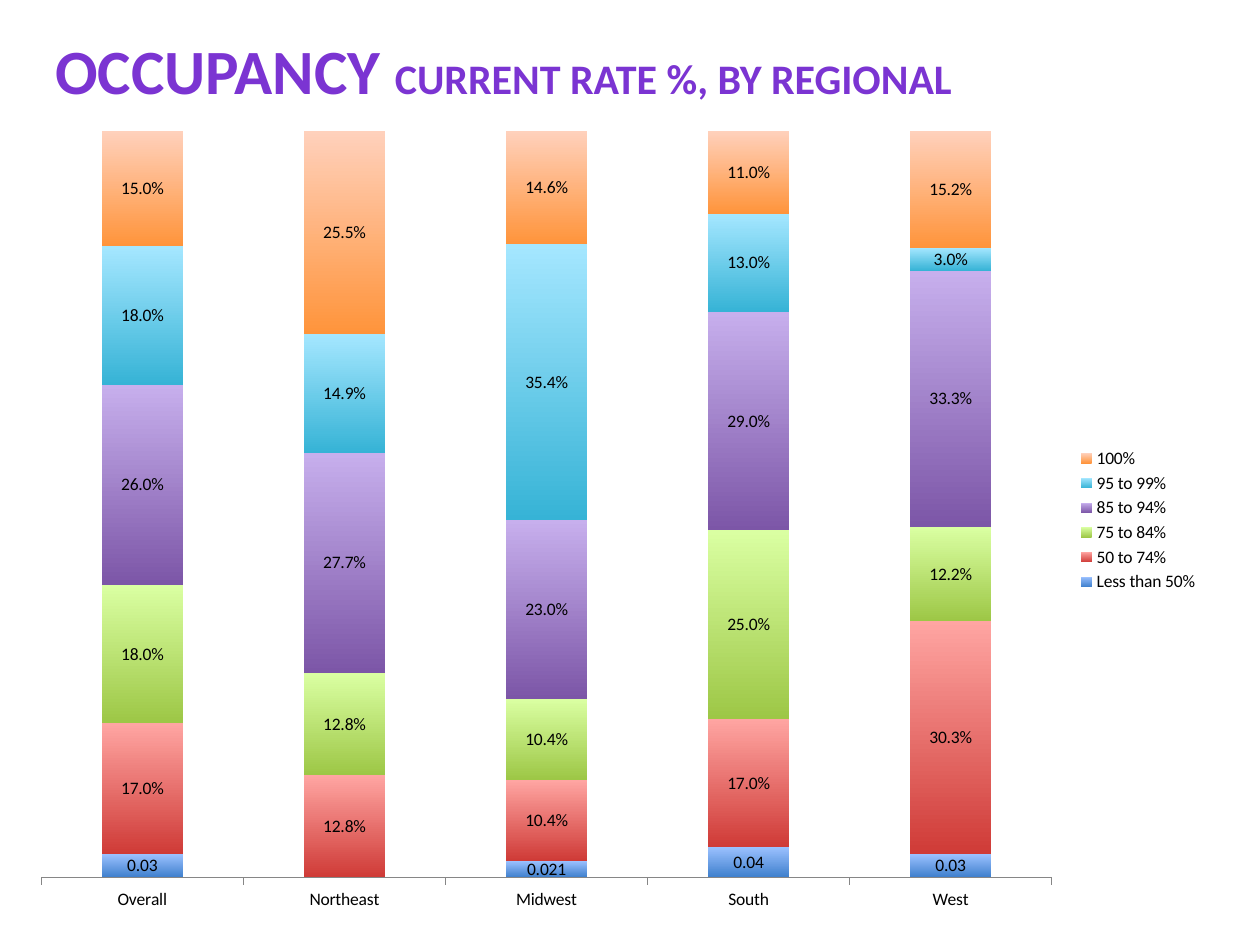
import pptx
import pptx.chart.data
import pptx.dml.color
import pptx.enum.chart
import pptx.enum.text
import pptx.util

Pt = pptx.util.Pt
FONT = "Calibri"
REGIONS = ["Overall", "Northeast", "Midwest", "South", "West"]

# Name, values by region, gradient from bottom to top, label format
BANDS = [
    ("Less than 50%", (0.03, None, 0.021, 0.04, 0.03), "3F80CD", "9BC1FF", "General"),
    ("50 to 74%", (0.17, 0.128, 0.104, 0.17, 0.303), "CF3B37", "FFA5A2", "0.0%"),
    ("75 to 84%", (0.18, 0.128, 0.104, 0.25, 0.122), "9DC746", "DAFFA2", "0.0%"),
    ("85 to 94%", (0.26, 0.277, 0.23, 0.29, 0.333), "7C56A7", "C7AFED", "0.0%"),
    ("95 to 99%", (0.18, 0.149, 0.354, 0.13, 0.03), "36B3D6", "A5E7FF", "0.0%"),
    ("100%", (0.15, 0.255, 0.146, 0.11, 0.152), "FF943B", "FFD1BC", "0.0%"),
]


def color(value):
    return pptx.dml.color.RGBColor.from_string(value)


def style_font(font, size, value, bold=False):
    font.name = FONT
    font.size = Pt(size)
    font.bold = bold
    font.color.rgb = color(value)


def add_title(page, parts):
    box = page.shapes.add_textbox(Pt(24.5), Pt(14.4), Pt(695.5), Pt(51))
    frame = box.text_frame
    frame.word_wrap = True
    frame.auto_size = pptx.enum.text.MSO_AUTO_SIZE.SHAPE_TO_FIT_TEXT
    para = frame.paragraphs[0]
    for text, size in parts:
        span = para.add_run()
        span.text = text
        style_font(span.font, size, "7B34D2", bold=True)


def style_band(series, bottom, top, number_format):
    # Vertical gradient
    fill = series.format.fill
    fill.gradient()
    fill.gradient_angle = 90
    for stop, value, position in zip(fill.gradient_stops, (bottom, top), (0, 1)):
        stop.color.rgb = color(value)
        stop.position = position

    # Value labels
    labels = series.data_labels
    labels.show_value = True
    labels.number_format = number_format
    labels.number_format_is_linked = False
    labels.position = pptx.enum.chart.XL_LABEL_POSITION.CENTER
    style_font(labels.font, 10, "000000")


def add_occupancy_chart(page):
    data = pptx.chart.data.CategoryChartData()
    data.categories = REGIONS
    for name, values, *_ in BANDS:
        data.add_series(name, values)
    chart = page.shapes.add_chart(
        pptx.enum.chart.XL_CHART_TYPE.COLUMN_STACKED_100,
        Pt(10), Pt(65.5), Pt(682), Pt(463.5), data).chart
    style_font(chart.font, 10, "000000")
    chart.has_title = False

    # Columns
    plot = chart.plots[0]
    plot.gap_width = 150
    plot.overlap = 100
    plot.vary_by_categories = False
    for series, (_, _, bottom, top, number_format) in zip(plot.series, BANDS):
        style_band(series, bottom, top, number_format)

    # Axes
    chart.value_axis.visible = False
    chart.value_axis.has_major_gridlines = False
    axis = chart.category_axis
    axis.major_tick_mark = pptx.enum.chart.XL_TICK_MARK.OUTSIDE
    axis.format.line.color.rgb = color("868686")

    # Legend
    chart.has_legend = True
    chart.legend.position = pptx.enum.chart.XL_LEGEND_POSITION.RIGHT
    chart.legend.include_in_layout = False


def main():
    deck = pptx.Presentation()
    deck.slide_width, deck.slide_height = Pt(720), Pt(540)
    page = deck.slides.add_slide(deck.slide_layouts[6])
    add_title(page, [("OCCUPANCY ", 36), ("CURRENT RATE %, BY REGIONAL", 24)])
    add_occupancy_chart(page)
    deck.save("out.pptx")


if __name__ == "__main__":
    main()
